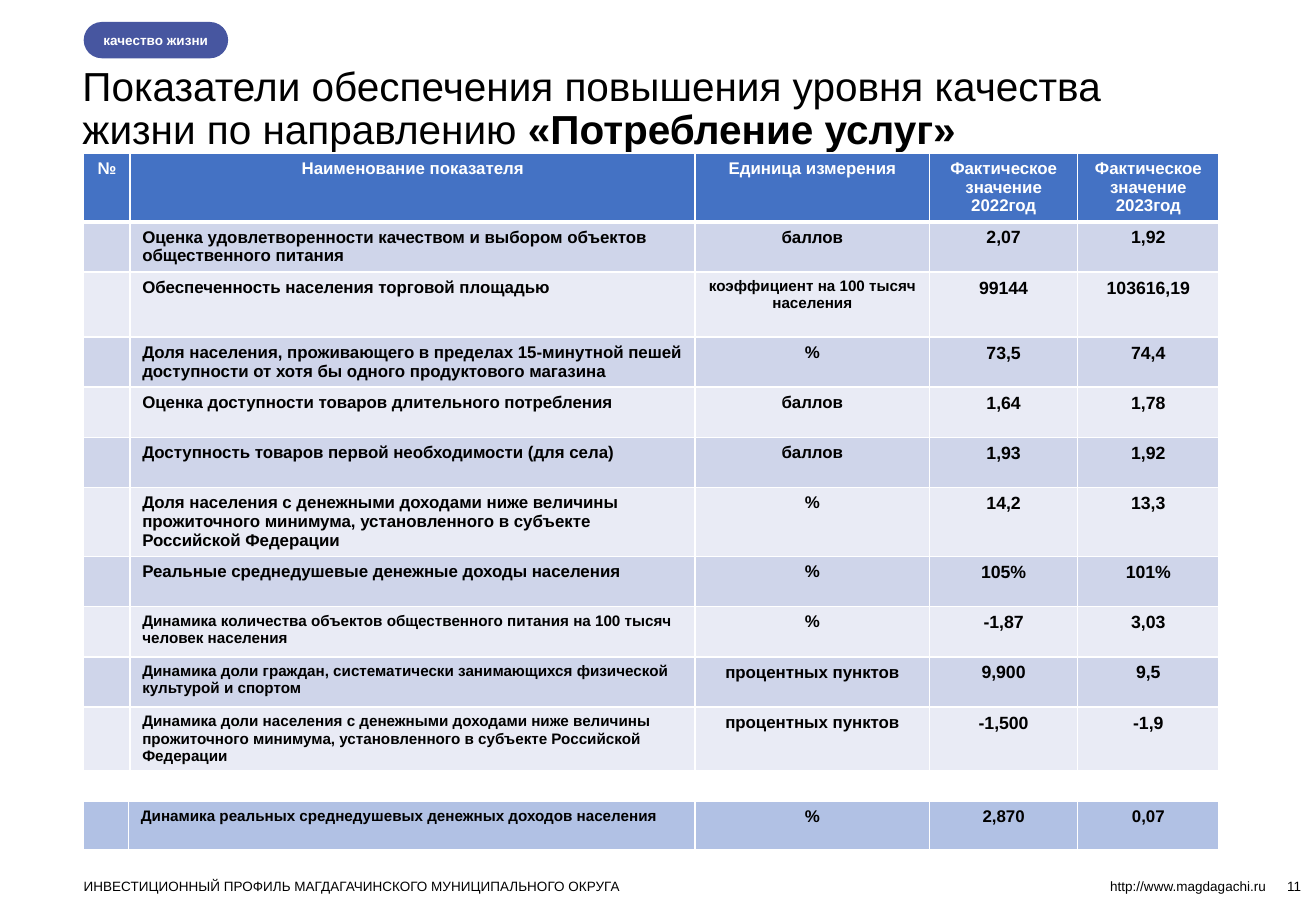
from dataclasses import dataclass

from lxml.etree import SubElement
from pptx import Presentation
from pptx.dml.color import RGBColor
from pptx.enum.shapes import MSO_SHAPE as Shape
from pptx.enum.text import MSO_ANCHOR as Anchor, PP_ALIGN as Align
from pptx.oxml.ns import qn
from pptx.slide import Slide
from pptx.table import _Cell as Cell
from pptx.text.text import TextFrame, _Run as Run
from pptx.util import Cm, Pt

WHITE = RGBColor(0xFF, 0xFF, 0xFF)
BLACK = RGBColor(0x00, 0x00, 0x00)
HEADER_BLUE = RGBColor(0x44, 0x72, 0xC4)
BAND_DARK = RGBColor(0xCF, 0xD5, 0xEA)
BAND_LIGHT = RGBColor(0xE9, 0xEB, 0xF5)
INCOME_BLUE = RGBColor(0xB1, 0xC1, 0xE4)
TAG_VIOLET = RGBColor(0x47, 0x56, 0xA0)

LEFT = 1.75
FOOTER_TOP = 18.36
THIN, THICK = 1, 3


@dataclass
class Indicator:
    name: str
    unit: str
    year_2022: str
    year_2023: str
    height: float = 1.05
    name_size: float = 10
    unit_size: float = 10
    value_size: float = 10.5
    color: RGBColor = BLACK
    name_align: Align = Align.LEFT
    number: str = ""


@dataclass
class FooterText:
    text: str
    left: float
    width: float
    align: Align = Align.RIGHT
    anchor: Anchor = Anchor.TOP


HEADER = Indicator("Наименование показателя", "Единица измерения",
                   "Фактическое значение 2022год", "Фактическое значение 2023год",
                   1.43, value_size=10, color=WHITE, name_align=Align.CENTER, number="№")

INDICATORS = [
    Indicator("Оценка удовлетворенности качеством и выбором объектов общественного питания",
              "баллов", "2,07", "1,92"),
    Indicator("Обеспеченность населения торговой площадью",
              "коэффициент на 100 тысяч населения", "99144", "103616,19", 1.36, unit_size=9),
    Indicator("Доля населения, проживающего в пределах 15-минутной пешей доступности "
              "от хотя бы одного продуктового магазина", "%", "73,5", "74,4"),
    Indicator("Оценка доступности товаров длительного потребления", "баллов", "1,64", "1,78"),
    Indicator("Доступность товаров первой необходимости (для села)", "баллов", "1,93", "1,92"),
    Indicator("Доля населения с денежными доходами ниже величины прожиточного минимума, "
              "установленного в субъекте Российской Федерации", "%", "14,2", "13,3", 1.44),
    Indicator("Реальные среднедушевые денежные доходы населения", "%", "105%", "101%"),
    Indicator("Динамика количества объектов общественного питания на 100 тысяч человек населения",
              "%", "-1,87", "3,03", name_size=9),
    Indicator("Динамика доли граждан, систематически занимающихся физической культурой и спортом",
              "процентных пунктов", "9,900", "9,5", name_size=9),
    Indicator("Динамика доли населения с денежными доходами ниже величины прожиточного минимума, "
              "установленного в субъекте Российской Федерации",
              "процентных пунктов", "-1,500", "-1,9", 1.32, name_size=9),
]

REAL_INCOME = Indicator("Динамика реальных среднедушевых денежных доходов населения",
                        "%", "2,870", "0,07", name_size=9, value_size=10)

FOOTER = [
    FooterText("ИНВЕСТИЦИОННЫЙ ПРОФИЛЬ МАГДАГАЧИНСКОГО МУНИЦИПАЛЬНОГО ОКРУГА",
               LEFT, 20.32, Align.LEFT),
    FooterText("http://www.magdagachi.ru", 22.07, 4.4),
    FooterText("11", 25.17, 2.03, anchor=Anchor.BOTTOM),
]


def format_run(run: Run, size: float, color: RGBColor = BLACK, bold: bool = False) -> None:
    for attribute, value in {"name": "Arial", "size": Pt(size), "bold": bold}.items():
        setattr(run.font, attribute, value)
    run.font.color.rgb = color


def set_frame(frame: TextFrame, anchor: Anchor, left_inset: float = 0) -> None:
    layout = {"margin_left": Cm(left_inset), "margin_top": 0, "margin_right": 0,
              "margin_bottom": 0, "word_wrap": True, "vertical_anchor": anchor}
    for attribute, value in layout.items():
        setattr(frame, attribute, value)


def set_borders(cell: Cell, top: float, bottom: float) -> None:
    properties = cell._tc.get_or_add_tcPr()
    for side, width in {"L": THIN, "R": THIN, "T": top, "B": bottom}.items():
        line = SubElement(properties, qn(f"a:ln{side}"), w=str(Pt(width)))
        SubElement(SubElement(line, qn("a:solidFill")), qn("a:srgbClr"), val=str(WHITE))


def add_indicator_table(slide: Slide, top: float, columns: list[float], rows: list[Indicator],
                        fills: list[RGBColor], thick_edge: int) -> None:
    """Draw the rows; the horizontal edge below row thick_edge is the thick one."""
    table = slide.shapes.add_table(
        len(rows), len(columns), Cm(LEFT), Cm(top), Cm(sum(columns)),
        Cm(sum(row.height for row in rows))).table
    table.horz_banding = False
    table.first_row = rows[0] is HEADER
    for column, width in zip(table.columns, columns):
        column.width = Cm(width)
    for r, (row, fill) in enumerate(zip(rows, fills)):
        table.rows[r].height = Cm(row.height)
        contents = [
            (row.number, 10, Align.CENTER),
            (row.name, row.name_size, row.name_align),
            (row.unit, row.unit_size, Align.CENTER),
            (row.year_2022, row.value_size, Align.CENTER),
            (row.year_2023, row.value_size, Align.CENTER),
        ]
        for c, (text, size, align) in enumerate(contents):
            cell = table.cell(r, c)
            set_borders(cell, THICK if r == thick_edge + 1 else THIN,
                        THICK if r == thick_edge else THIN)
            cell.fill.solid()
            cell.fill.fore_color.rgb = fill
            paragraph = cell.text_frame.paragraphs[0]
            paragraph.alignment = align
            if text:
                run = paragraph.add_run()
                run.text = text
                format_run(run, size, row.color, True)


def add_title(slide: Slide) -> None:
    title = slide.shapes.title
    place = {"left": Cm(1.47), "top": Cm(0.46), "width": Cm(23.72), "height": Cm(3.68)}
    for attribute, value in place.items():
        setattr(title, attribute, value)
    title.text_frame.vertical_anchor = Anchor.MIDDLE
    title.text_frame.word_wrap = True
    paragraph = title.text_frame.paragraphs[0]
    paragraph.alignment = Align.LEFT
    paragraph.line_spacing = 0.9
    for text, bold in [
        ("Показатели обеспечения повышения уровня качества жизни по направлению ", False),
        ("«Потребление услуг»", True),
    ]:
        run = paragraph.add_run()
        run.text = text
        format_run(run, 24, bold=bold)


def add_section_tag(slide: Slide) -> None:
    tag = slide.shapes.add_shape(Shape.ROUNDED_RECTANGLE, Cm(LEFT), Cm(0.46), Cm(3.02), Cm(0.76))
    tag.adjustments[0] = 0.5
    tag.shadow.inherit = False
    tag.fill.solid()
    tag.fill.fore_color.rgb = TAG_VIOLET
    tag.line.fill.background()
    set_frame(tag.text_frame, Anchor.MIDDLE, 0.3)
    paragraph = tag.text_frame.paragraphs[0]
    paragraph.alignment = Align.LEFT
    run = paragraph.add_run()
    run.text = "качество жизни"
    format_run(run, 8, WHITE, True)


def add_footer_text(slide: Slide, item: FooterText) -> None:
    box = slide.shapes.add_textbox(Cm(item.left), Cm(FOOTER_TOP), Cm(item.width), Cm(0.33))
    set_frame(box.text_frame, item.anchor)
    paragraph = box.text_frame.paragraphs[0]
    paragraph.alignment = item.align
    run = paragraph.add_run()
    run.text = item.text
    format_run(run, 8)


def main() -> None:
    deck = Presentation()
    deck.slide_width, deck.slide_height = Cm(27.51), Cm(19.05)
    slide = deck.slides.add_slide(deck.slide_layouts[5])

    # Heading
    add_title(slide)
    add_section_tag(slide)

    # Indicators, then the separate income row
    bands = [(BAND_DARK, BAND_LIGHT)[i % 2] for i in range(len(INDICATORS))]
    add_indicator_table(slide, 3.2, [0.97, 11.81, 4.9, 3.1, 2.95],
                        [HEADER, *INDICATORS], [HEADER_BLUE, *bands], 0)
    add_indicator_table(slide, 16.76, [0.94, 11.84, 4.9, 3.1, 2.95],
                        [REAL_INCOME], [INCOME_BLUE], 0)

    # Footer
    for item in FOOTER:
        add_footer_text(slide, item)

    deck.save("out.pptx")


if __name__ == "__main__":
    main()
